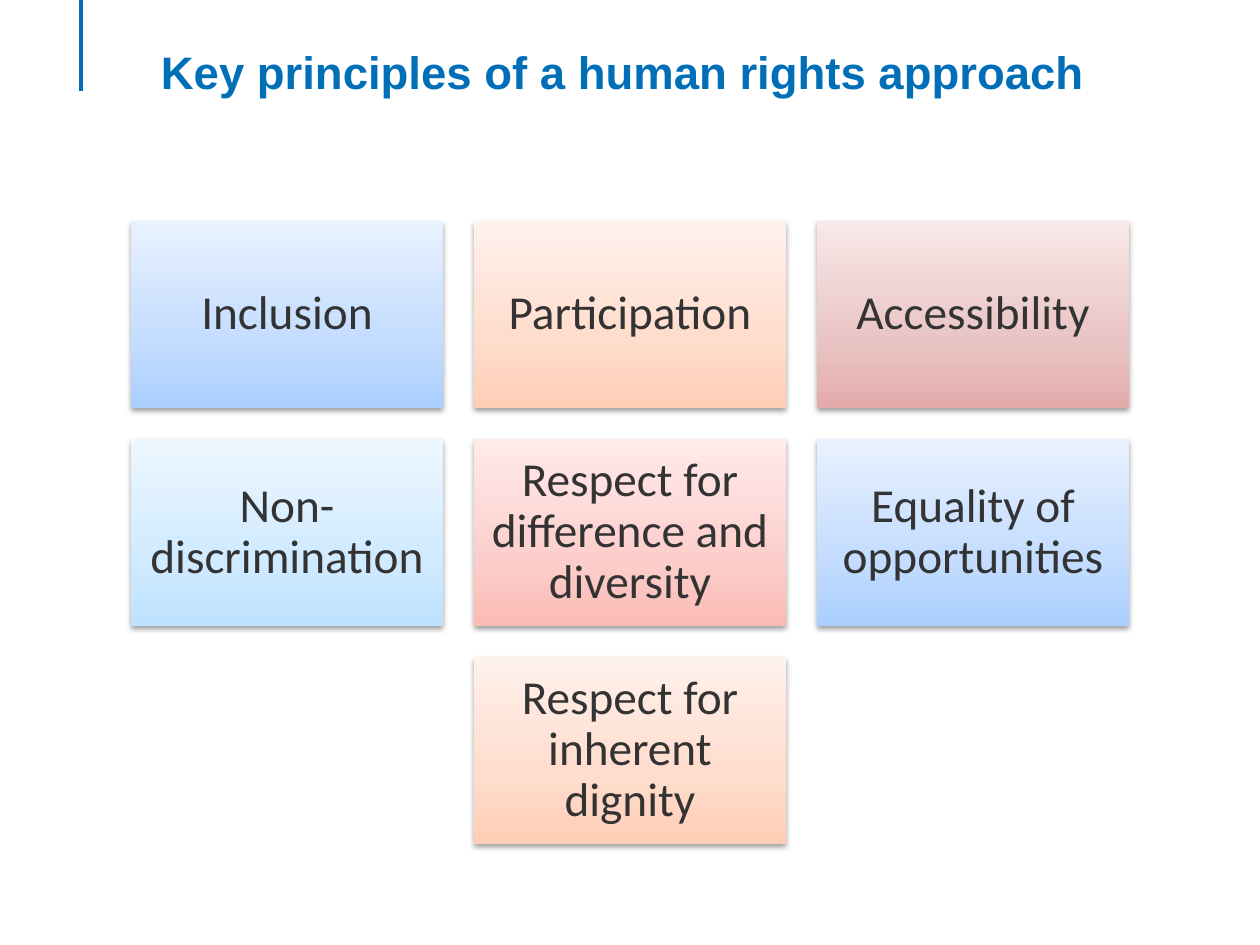
from lxml.etree import SubElement
from pptx import Presentation
from pptx.dml.color import RGBColor
from pptx.enum.shapes import MSO_CONNECTOR, MSO_SHAPE
from pptx.enum.text import MSO_ANCHOR, PP_ALIGN
from pptx.oxml import parse_xml
from pptx.oxml.ns import qn
from pptx.util import Emu, Pt

SCALE = 914400 / 126
NS = 'xmlns:a="http://schemas.openxmlformats.org/drawingml/2006/main"'
HUES = {"title": "006FB7", "text": "333333"}
# Gradient stops from bottom to top
FADES = {
    "blue": ["AACFFF", "C3DCFF", "E8F1FF"],
    "peach": ["FFCEB6", "FFDCCC", "FFF1EC"],
    "rose": ["E3AAAA", "EAC4C4", "F8E8E8"],
    "sky": ["BDE2FF", "D0EAFF", "EDF7FF"],
    "coral": ["FCBAB5", "FCCECB", "FFEBEA"],
}
SHADOW = f"""<a:effectLst {NS}>
  <a:outerShdw blurRad="40000" dist="20000" dir="5400000" rotWithShape="0">
    <a:srgbClr val="000000"><a:alpha val="38000"/></a:srgbClr>
  </a:outerShdw></a:effectLst>"""


def px(n):
    return Emu(round(n * SCALE))


def write(shape, text, size, font, hue, bold=False, anchor=MSO_ANCHOR.MIDDLE, pad=14, gap=0.9):
    frame = shape.text_frame
    frame.word_wrap = True
    frame.vertical_anchor = anchor
    frame.margin_left = frame.margin_right = px(pad)
    frame.margin_top = frame.margin_bottom = px(min(pad, 14))
    para = frame.paragraphs[0]
    para.text = text
    para.alignment = PP_ALIGN.CENTER
    para.line_spacing = gap
    para.font.size = Pt(size)
    para.font.name = font
    para.font.bold = bold
    para.font.color.rgb = RGBColor.from_string(HUES[hue])


deck = Presentation()
deck.slide_width, deck.slide_height = px(1260), px(945)
slide = deck.slides.add_slide(deck.slide_layouts[5])

# Accent line at the top left
line = slide.shapes.add_connector(MSO_CONNECTOR.STRAIGHT, px(81), 0, px(81), px(91))
line.line.color.rgb = RGBColor.from_string(HUES["title"])
line.line.width = Pt(2)
SubElement(line._element.spPr, qn("a:effectLst"))

# Title
title = slide.shapes.title
title.left, title.top, title.width, title.height = px(102), px(38), px(1042), px(150)
write(title, "Key principles of a human rights approach", size=26, font="Arial",
      hue="title", bold=True, anchor=MSO_ANCHOR.TOP, pad=6, gap=1.0)

# Grid of principles: the last row holds one centred card
rows = [
    [("Inclusion", "blue"), ("Participation", "peach"), ("Accessibility", "rose")],
    [("Non-discrimination", "sky"), ("Respect for difference and diversity", "coral"),
     ("Equality of opportunities", "blue")],
    [("Respect for inherent dignity", "peach")],
]
wide, high, gap = 312, 187, 31
for r, row in enumerate(rows):
    start = 131 + (3 - len(row)) * (wide + gap) / 2
    for c, (text, fade) in enumerate(row):
        card = slide.shapes.add_shape(
            MSO_SHAPE.RECTANGLE, px(start + c * (wide + gap)),
            px(221 + r * (high + gap)), px(wide), px(high))
        card.line.fill.background()
        stops = "".join(
            f'<a:gs pos="{pos}000"><a:srgbClr val="{hue}"/></a:gs>'
            for pos, hue in zip((0, 35, 100), FADES[fade]))
        props = card._element.spPr
        props.find(qn("a:prstGeom")).addnext(parse_xml(
            f'<a:gradFill {NS} rotWithShape="1"><a:gsLst>{stops}</a:gsLst>'
            '<a:lin ang="16200000" scaled="0"/></a:gradFill>'))
        props.append(parse_xml(SHADOW))
        write(card, text, size=27, font="Calibri", hue="text")

deck.save("out.pptx")
